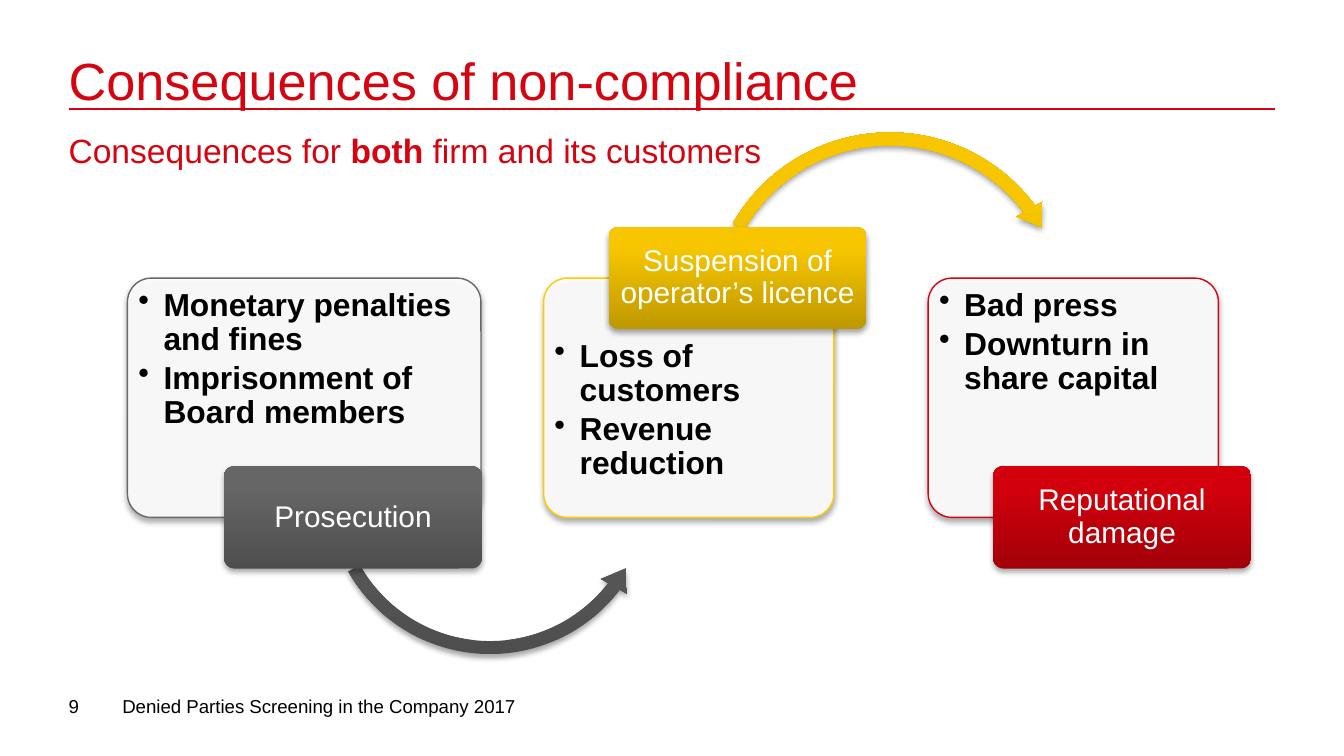
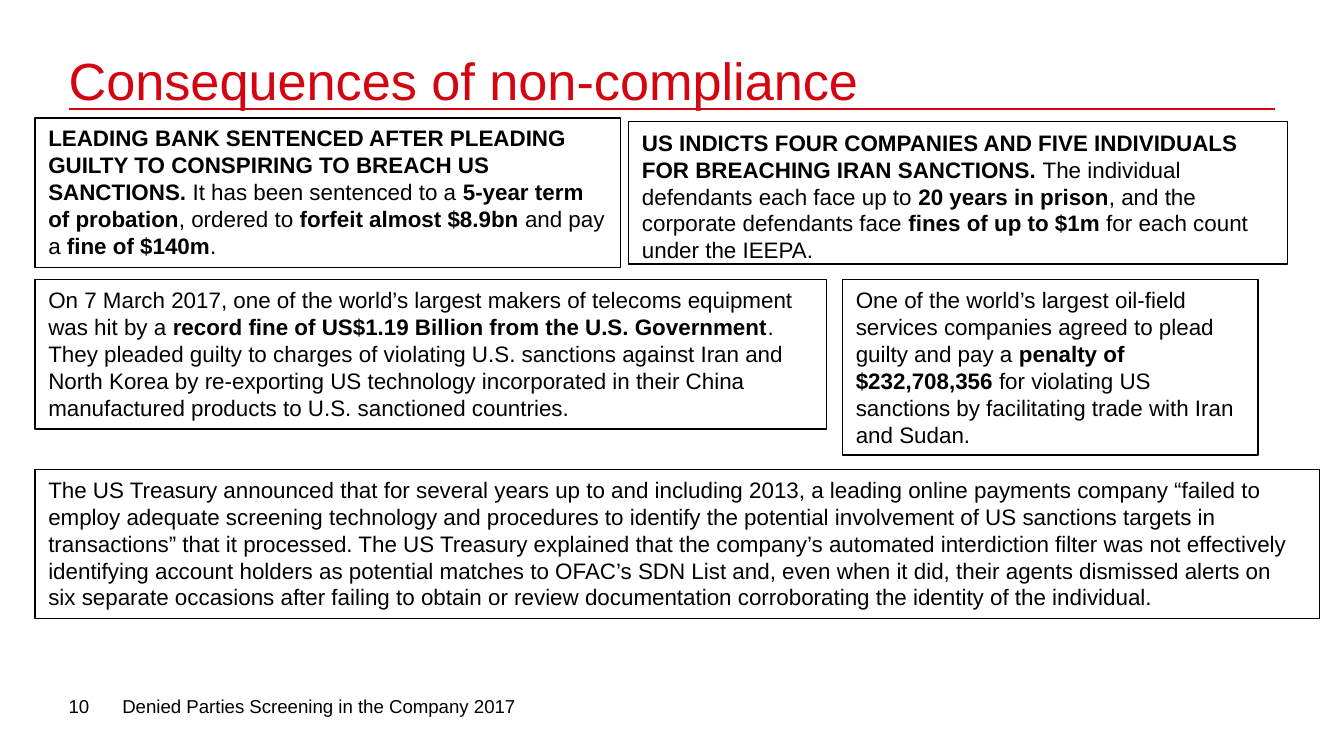
from dataclasses import dataclass

from lxml import etree
from pptx import Presentation
from pptx.dml.color import RGBColor
from pptx.enum.shapes import MSO_CONNECTOR, MSO_SHAPE
from pptx.enum.text import MSO_ANCHOR, MSO_AUTO_SIZE, PP_ALIGN
from pptx.oxml.ns import qn
from pptx.util import Pt

ROUNDED = MSO_SHAPE.ROUNDED_RECTANGLE
ARROW_OVER = MSO_SHAPE.CIRCULAR_ARROW
ARROW_UNDER = MSO_SHAPE.LEFT_CIRCULAR_ARROW
TOP, MIDDLE, BOTTOM = MSO_ANCHOR.TOP, MSO_ANCHOR.MIDDLE, MSO_ANCHOR.BOTTOM
LEFT, CENTER = PP_ALIGN.LEFT, PP_ALIGN.CENTER
STRAIGHT = MSO_CONNECTOR.STRAIGHT
NO_FIT, GROW = MSO_AUTO_SIZE.NONE, MSO_AUTO_SIZE.SHAPE_TO_FIT_TEXT


@dataclass(frozen=True)
class Theme:
    font: str = "Arial"
    red: str = "D40511"
    black: str = "000000"
    white: str = "FFFFFF"
    title: float = 28
    subtitle: float = 18
    bullet: float = 17
    tag: float = 16
    case: float = 12
    footer: float = 10
    outline: float = 0.75


THEME = Theme()
SLIDE_SIZE = (720, 405)
MARGIN, CONTENT_WIDTH = 36.75, 646.5
TITLE_TOP, TITLE_HEIGHT, TITLE_LEADING = 27.4, 30.3, 32
RULE_Y = 58.3
FOOTER_TOP, FOOTER_HEIGHT, NUMBER_WIDTH = 369.4, 15, 28.8

TITLE = "Consequences of non-compliance"
FOOTER = "Denied Parties Screening in the Company 2017"
SUBTITLE = [("Consequences for ", False), ("both", True), (" firm and its customers", False)]

CARD_TOP, CARD_HEIGHT, CARD_PITCH, FIRST_CENTER = 149, 128.2, 206, 163
CARD_INSET, CARD_TEXT_HEIGHT = 2.9, 95
TAG_SIZE, TAG_OFFSET, TAG_INSET = (138.2, 54.8), -43, 1.6

STEPS = [
    {
        "tag": "Prosecution",
        "bullets": ["Monetary penalties and fines", "Imprisonment of Board members"],
        "width": 189.4, "tag_on_top": False,
        "outline": "696969", "gradient": ("4E4E4E", "666666"),
        "arrow": (ARROW_UNDER, 170.7, 171.4, 183.6, (0.038, 4.756, 22.512, 90.245, 0.044)),
    },
    {
        "tag": "Suspension of operator’s licence",
        "bullets": ["Loss of customers", "Revenue reduction"],
        "width": 155.5, "tag_on_top": True,
        "outline": "FFCC00", "gradient": ("BE9800", "F7C600"),
        "arrow": (ARROW_OVER, 375.2, 66.3, 203, (0.034, 4.254, 193.991, 125.755, 0.04)),
    },
    {
        "tag": "Reputational damage",
        "bullets": ["Bad press", "Downturn in share capital"],
        "width": 155.5, "tag_on_top": False,
        "outline": THEME.red, "gradient": ("A20009", "D2000C"),
        "arrow": None,
    },
]

CASE_INSETS = (7.2, 3.6, 7.2, 3.6)
CASES = [
    {
        "at": (18.8, 63.2, 313.8, 80), "fill": False,
        "runs": [
            ("LEADING BANK SENTENCED AFTER PLEADING GUILTY TO CONSPIRING TO BREACH US SANCTIONS. ", True),
            ("It has been sentenced to a ", False), ("5-year term of probation", True),
            (", ordered to ", False), ("forfeit almost $8.9bn ", True),
            ("and pay a ", False), ("fine of $140m", True), (".", False),
        ],
    },
    {
        "at": (336.8, 65.1, 353, 76.4), "fill": True,
        "anchor": MIDDLE, "insets": (7.2, 3.6, 7.2, 0),
        "runs": [
            ("US INDICTS FOUR COMPANIES AND FIVE INDIVIDUALS FOR BREACHING IRAN SANCTIONS. ", True),
            ("The individual defendants each face up to ", False), ("20 years in prison", True),
            (", and the corporate defendants face ", False), ("fines of up to $1m", True),
            (" for each count under the IEEPA.", False),
        ],
    },
    {
        "at": (451.4, 149.9, 222.6, 93.8), "fill": False,
        "runs": [
            ("One of the world’s largest oil-field services companies agreed to plead guilty and pay a ", False),
            ("penalty of $232,708,356 ", True),
            ("for violating US sanctions by facilitating trade with Iran and Sudan.", False),
        ],
    },
    {
        "at": (18.8, 251.5, 688.2, 80), "fill": False,
        "runs": [
            ("The US Treasury announced that for several years up to and including 2013, a leading online "
             "payments company “failed to employ adequate screening technology and procedures to identify "
             "the potential involvement of US sanctions targets in transactions” that it processed. "
             "The US Treasury explained that the company’s automated interdiction filter was not effectively "
             "identifying account holders as potential matches to OFAC’s SDN List and, even when it did, "
             "their agents dismissed alerts on six separate occasions after failing to obtain or review "
             "documentation corroborating the identity of the individual.", False),
        ],
    },
    {
        "at": (18.8, 149.9, 424, 80), "fill": True,
        "runs": [
            ("On 7 March 2017, one of the world’s largest makers of telecoms equipment was hit by a ", False),
            ("record fine of US$1.19 Billion from the U.S. Government", True),
            (". They pleaded guilty to charges of violating U.S. sanctions against Iran and North Korea by "
             "re-exporting US technology incorporated in their China manufactured products to U.S. "
             "sanctioned countries.", False),
        ],
    },
]


def rgb(color):
    return RGBColor.from_string(color)


def points(values):
    return [Pt(value) for value in values]


def add_runs(para, runs, size, color):
    for text, bold in runs:
        span = para.add_run()
        span.text = text
        span.font.name = THEME.font
        span.font.size = Pt(size)
        span.font.bold = bold
        span.font.color.rgb = rgb(color)


def format_frame(frame, insets=(0, 0, 0, 0), anchor=TOP, wrap=True, fit=NO_FIT):
    frame.word_wrap = wrap
    frame.auto_size = fit
    frame.vertical_anchor = anchor
    (frame.margin_left, frame.margin_top,
     frame.margin_right, frame.margin_bottom) = points(insets)


def add_text(page, at, runs, size, color=THEME.black, **frame_format):
    box = page.shapes.add_textbox(*points(at))
    format_frame(box.text_frame, **frame_format)
    add_runs(box.text_frame.paragraphs[0], runs, size, color)
    return box


def add_page(deck, number, subtitle=()):
    page = deck.slides.add_slide(deck.slide_layouts[5])
    title = page.shapes.title
    title.left, title.top, title.width, title.height = points(
        (MARGIN, TITLE_TOP, CONTENT_WIDTH, TITLE_HEIGHT))
    format_frame(title.text_frame)
    para = title.text_frame.paragraphs[0]
    para.alignment = LEFT
    para.line_spacing = Pt(TITLE_LEADING)
    add_runs(para, [(TITLE, False)], THEME.title, THEME.red)
    if subtitle:
        para.add_line_break()
        add_runs(para, subtitle, THEME.subtitle, THEME.red)

    rule = page.shapes.add_connector(
        STRAIGHT, *points((MARGIN, RULE_Y, MARGIN + CONTENT_WIDTH, RULE_Y)))
    rule.line.color.rgb = rgb(THEME.red)
    rule.line.width = Pt(1)
    etree.SubElement(rule._element.spPr, qn("a:effectLst"))

    for text, left, width in ((str(number), MARGIN, NUMBER_WIDTH),
                              (FOOTER, MARGIN + NUMBER_WIDTH, 497.5)):
        add_text(page, (left, FOOTER_TOP, width, FOOTER_HEIGHT), [(text, False)],
                 THEME.footer, anchor=BOTTOM, wrap=False)
    return page


def add_shadow(shape):
    shape.shadow.inherit = False
    effects = shape._element.spPr.find(qn("a:effectLst"))
    shadow = etree.SubElement(effects, qn("a:outerShdw"), blurRad=str(Pt(3.1)),
                              dist=str(Pt(1.8)), dir="5400000", rotWithShape="0")
    color = etree.SubElement(shadow, qn("a:srgbClr"), val=THEME.black)
    etree.SubElement(color, qn("a:alpha"), val="35000")


def add_gradient_shape(page, kind, at, gradient, adjustments):
    shape = page.shapes.add_shape(kind, *points(at))
    for index, value in enumerate(adjustments):
        shape.adjustments[index] = value
    shape.fill.gradient()
    shape.fill.gradient_angle = 90
    for stop, color, position in zip(shape.fill.gradient_stops, gradient, (0, 0.8)):
        stop.color.rgb = rgb(color)
        stop.position = position
    shape.line.fill.background()
    add_shadow(shape)


def add_card(page, at, outline):
    card = page.shapes.add_shape(ROUNDED, *points(at))
    card.adjustments[0] = 0.1
    card.fill.solid()
    card.fill.fore_color.rgb = rgb(THEME.white)
    fill_color = card._element.spPr.find(qn("a:solidFill"))[0]
    etree.SubElement(fill_color, qn("a:alpha"), val="90000")
    card.line.color.rgb = rgb(outline)
    card.line.width = Pt(THEME.outline)
    add_shadow(card)


def add_bullets(page, at, bullets):
    box = page.shapes.add_textbox(*points(at))
    frame = box.text_frame
    format_frame(frame, insets=(CARD_INSET,) * 4)
    for index, text in enumerate(bullets):
        para = frame.add_paragraph() if index else frame.paragraphs[0]
        para.level = 1
        para.line_spacing = 0.9
        para.space_after = Pt(2.5)
        properties = para._p.get_or_add_pPr()
        properties.set("marL", str(Pt(13.5)))
        properties.set("indent", str(Pt(-13.5)))
        etree.SubElement(properties, qn("a:buChar"), char="•")
        add_runs(para, [(text, True)], THEME.bullet, THEME.black)


def add_step(page, index, step):
    center = FIRST_CENTER + index * CARD_PITCH
    left, width = center - step["width"] / 2, step["width"]
    add_card(page, (left, CARD_TOP, width, CARD_HEIGHT), step["outline"])

    text_top = CARD_TOP + CARD_INSET
    if step["tag_on_top"]:
        text_top = CARD_TOP + CARD_HEIGHT - CARD_INSET - CARD_TEXT_HEIGHT
    add_bullets(page, (left + CARD_INSET, text_top, width - 2 * CARD_INSET, CARD_TEXT_HEIGHT),
                step["bullets"])

    if step["arrow"]:
        kind, arrow_left, arrow_top, size, adjustments = step["arrow"]
        add_gradient_shape(page, kind, (arrow_left, arrow_top, size, size),
                           step["gradient"], adjustments)

    tag_width, tag_height = TAG_SIZE
    edge = CARD_TOP if step["tag_on_top"] else CARD_TOP + CARD_HEIGHT
    tag_left, tag_top = center + TAG_OFFSET, edge - tag_height / 2
    add_gradient_shape(page, ROUNDED, (tag_left, tag_top, tag_width, tag_height),
                       step["gradient"], (0.1,))
    label = add_text(page, (tag_left + TAG_INSET, tag_top + TAG_INSET,
                            tag_width - 2 * TAG_INSET, tag_height - 2 * TAG_INSET),
                     [(step["tag"], False)], THEME.tag, THEME.white,
                     insets=(2.4, 1.6, 2.4, 1.6), anchor=MIDDLE)
    para = label.text_frame.paragraphs[0]
    para.alignment = CENTER
    para.line_spacing = 0.9


def add_case(page, case):
    box = add_text(page, case["at"], case["runs"], THEME.case, fit=GROW,
                   insets=case.get("insets", CASE_INSETS), anchor=case.get("anchor", TOP))
    if case["fill"]:
        box.fill.solid()
        box.fill.fore_color.rgb = rgb(THEME.white)
    box.line.color.rgb = rgb(THEME.black)
    box.line.width = Pt(THEME.outline)


def main():
    deck = Presentation()
    deck.slide_width, deck.slide_height = points(SLIDE_SIZE)
    page = add_page(deck, 9, SUBTITLE)
    for index, step in enumerate(STEPS):
        add_step(page, index, step)
    page = add_page(deck, 10)
    for case in CASES:
        add_case(page, case)
    deck.save("out.pptx")


if __name__ == "__main__":
    main()
